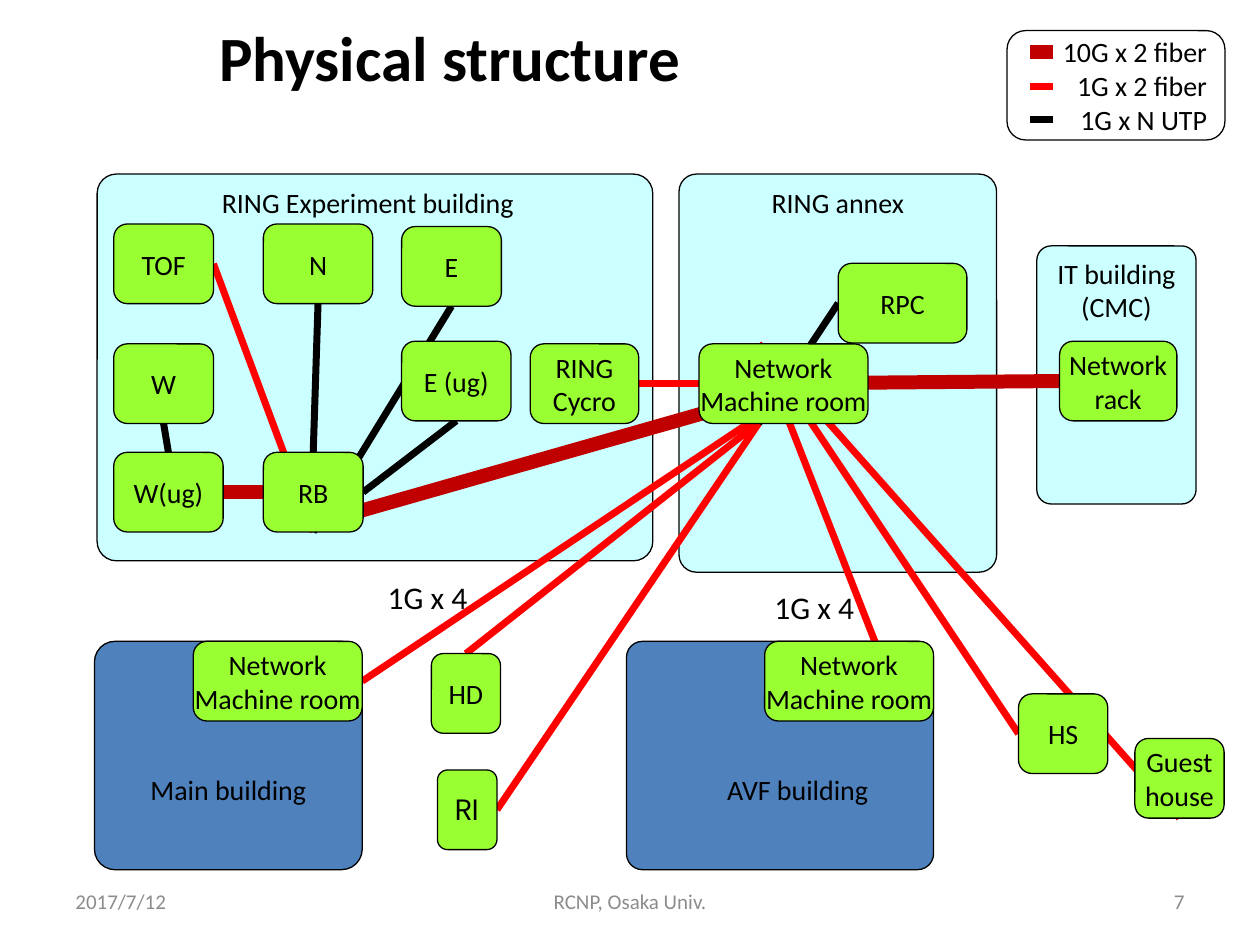
import pptx
import pptx.dml.color
import pptx.enum.shapes
import pptx.enum.text
import pptx.oxml
import pptx.util

Pt = pptx.util.Pt
ALIGN = pptx.enum.text.PP_ALIGN
ANCHOR = pptx.enum.text.MSO_ANCHOR
SHAPE = pptx.enum.shapes.MSO_SHAPE
STRAIGHT = pptx.enum.shapes.MSO_CONNECTOR.STRAIGHT

TOP, LEFT, BOTTOM, RIGHT = range(4)
ROOM_HEIGHT = 45.5
PALE, BLUE, GREEN = "CCFFFF", "4F81BD", "99FF33"
FIBER_10G, FIBER_1G, UTP = ("C00000", 8), ("FF0000", 4), ("000000", 4)

# name: (box, fill, corner, text, anchor, extra insets left/top/right)
BUILDINGS = {
    "annex": ((388, 99.5, 181.5, 227.5), PALE, 0.055, "RING annex", ANCHOR.TOP, (0, 0, 0)),
    "experiment": ((55.5, 99.5, 317.5, 221), PALE, 0.05, "RING Experiment building",
                   ANCHOR.TOP, (0, 0, 8)),
    "it": ((592.5, 140.5, 91, 147.5), PALE, 0.09, "IT building\n(CMC)", ANCHOR.TOP, (0, 0, 0)),
    "main": ((54, 366.5, 153, 130.5), BLUE, 0.09, "Main building", ANCHOR.MIDDLE, (0, 39, 0)),
    "avf": ((358, 366.5, 175.5, 130.5), BLUE, 0.07, "AVF building", ANCHOR.MIDDLE, (20, 39, 0)),
}

ROOMS = {
    "experiment": [
        ("TOF", "TOF", 9.5, 28.5, 57),
        ("W", "W", 9.5, 97, 57),
        ("W ug", "W(ug)", 9.5, 159, 62.5),
        ("N", "N", 95, 28.5, 62.5),
        ("RB", "RB", 95, 159, 57),
        ("E", "E", 174, 30, 57),
        ("E ug", "E (ug)", 174, 95.5, 62.5),
        ("Cycro", "RING\nCycro", 247.5, 97, 62),
    ],
    "annex": [
        ("RPC", "RPC", 91, 51, 73.5),
        ("hub", "Network\nMachine room", 11.5, 97, 96.5),
    ],
    "it": [("rack", "Network\nrack", 13, 54.5, 67)],
    "main": [("main room", "Network\nMachine room", 56.5, 0, 96.5)],
    "avf": [("avf room", "Network\nMachine room", 79, 0, 96.5)],
    "outside": [
        ("HD", "HD", 246.5, 373.5, 39.5),
        ("RI", "RI", 250, 440, 34),
        ("HS", "HS", 582, 396.5, 51),
        ("guest", "Guest\nhouse", 648.5, 422, 51),
    ],
}

HUB_TOP, HUB_BOTTOM, HUB_CORE = (433.5, 196.5), (433.5, 242), (462, 219)
CABLES = [
    (FIBER_10G, (190, 296.5), HUB_CORE),
    (FIBER_1G, ("HD", TOP), HUB_CORE),
    (FIBER_1G, HUB_TOP, ("guest", BOTTOM)),
    (FIBER_1G, ("HS", LEFT), HUB_TOP),
    (FIBER_10G, ("W ug", RIGHT), ("RB", LEFT)),
    (FIBER_1G, ("Cycro", RIGHT), ("hub", LEFT)),
    (UTP, ("RPC", LEFT), HUB_BOTTOM),
    (FIBER_1G, HUB_TOP, (500.5, 368)),
    (UTP, ("W", BOTTOM), ("W ug", TOP)),
    (UTP, ("E ug", BOTTOM), ("RB", RIGHT)),
    (UTP, ("E", BOTTOM), ("RB", BOTTOM)),
    (UTP, ("N", BOTTOM), ("RB", TOP)),
    (FIBER_1G, ("TOF", RIGHT), ("RB", BOTTOM)),
    (FIBER_1G, ("main room", RIGHT), HUB_CORE),
    (FIBER_1G, ("RI", RIGHT), HUB_BOTTOM),
    (FIBER_10G, (460, 219), ("rack", LEFT)),
]


def color(hex_text):
    """Return the colour for a hex string."""
    return pptx.dml.color.RGBColor.from_string(hex_text)


def write(shape, text, size=16, align=ALIGN.CENTER, anchor=ANCHOR.MIDDLE,
          ink="000000", bold=False, font="Calibri", wrap=True):
    """Put formatted text in a shape."""
    frame = shape.text_frame
    frame.text = text
    frame.word_wrap = wrap
    frame.vertical_anchor = anchor
    for para in frame.paragraphs:
        para.alignment = align
        for span in para.runs:
            span.font.size = Pt(size)
            span.font.name = font
            span.font.bold = bold
            span.font.color.rgb = color(ink)


def add_panel(page, box, fill, corner):
    """Add an outlined rounded rectangle."""
    panel = page.shapes.add_shape(SHAPE.ROUNDED_RECTANGLE, *map(Pt, box))
    panel.adjustments[0] = corner
    panel.shadow.inherit = False
    if fill:
        panel.fill.solid()
        panel.fill.fore_color.rgb = color(fill)
    else:
        panel.fill.background()
    panel.line.color.rgb = color("000000")
    panel.line.width = Pt(0.75)
    return panel


def add_label(page, box, text, **style):
    """Add a plain text box."""
    write(page.shapes.add_textbox(*map(Pt, box)), text, **style)


def add_cable(page, kind, start=(0, 0), end=(0, 0)):
    """Add a straight cable of the given kind."""
    ink, width = kind
    cable = page.shapes.add_connector(STRAIGHT, *map(Pt, start + end))
    cable.line.color.rgb = color(ink)
    cable.line.width = Pt(width)
    cable._element.spPr.append(pptx.oxml.parse_xml(
        '<a:effectLst xmlns:a="http://schemas.openxmlformats.org/drawingml/2006/main"/>'))
    return cable


def join_cable(cable, start, end, rooms):
    """Lead both ends of a cable to a room side or a free point."""
    if start[0] in rooms:
        cable.begin_connect(rooms[start[0]], start[1])
    else:
        cable.begin_x, cable.begin_y = map(Pt, start)
    if end[0] in rooms:
        cable.end_connect(rooms[end[0]], end[1])
    else:
        cable.end_x, cable.end_y = map(Pt, end)


def add_building(page, box, fill, corner, text, anchor, insets):
    """Add a building with its name."""
    building = add_panel(page, box, fill, corner)
    write(building, text, anchor=anchor)
    frame = building.text_frame
    frame.margin_left = Pt(7.2 + insets[0])
    frame.margin_top = Pt(3.6 + insets[1])
    frame.margin_right = Pt(7.2 + insets[2])


def add_rooms(page, box, entries):
    """Add the rooms of one area and return them by name."""
    rooms = {}
    for name, text, left, top, width in entries:
        room_box = (box[0] + left, box[1] + top, width, ROOM_HEIGHT)
        rooms[name] = add_panel(page, room_box, GREEN, 0.17)
        font = "Noto Sans CJK JP" if name == "RI" else "Calibri"
        write(rooms[name], text, font=font, wrap=False)
    return rooms


def add_legend(page, box):
    """Add the key to the cable kinds."""
    write(add_panel(page, box, None, 0.17),
          "10G x 2 fiber\n1G x 2 fiber\n1G x N UTP", align=ALIGN.RIGHT)
    for row, kind in enumerate((FIBER_10G, FIBER_1G, UTP)):
        left, level = box[0] + 13, box[1] + 12.5 + 19.25 * row
        add_cable(page, kind, (left, level), (left + 13.5, level))


def add_footer(page, box):
    """Add date, place and page number along the bottom."""
    left, top, width, height = box
    parts = [("2017/7/12", 0, 168, ALIGN.LEFT),
             ("RCNP, Osaka Univ.", 210, 228, ALIGN.CENTER),
             ("7", width - 168, 168, ALIGN.RIGHT)]
    for text, offset, span_width, align in parts:
        add_label(page, (left + offset, top, span_width, height), text,
                  size=12, align=align, ink="8C8C8C")


def add_network(page, outside):
    """Add buildings, cables and rooms, with the cables behind the rooms."""
    for building in BUILDINGS.values():
        add_building(page, *building)
    cables = [add_cable(page, kind) for kind, _, _ in CABLES]
    rooms = {}
    for area, entries in ROOMS.items():
        box = BUILDINGS[area][0] if area in BUILDINGS else outside
        rooms.update(add_rooms(page, box, entries))
    for cable, (_, start, end) in zip(cables, CABLES):
        join_cable(cable, start, end, rooms)
    for left, top in ((214.5, 327), (435.5, 332.5)):
        add_label(page, (outside[0] + left, outside[1] + top, 66, 29), "1G x 4",
                  size=18, align=ALIGN.LEFT, anchor=ANCHOR.TOP)


def main():
    """Build and save the slide."""
    deck = pptx.Presentation()
    deck.slide_width, deck.slide_height = Pt(720), Pt(540)
    page = deck.slides.add_slide(deck.slide_layouts[6])
    add_label(page, (54, 4.5, 406, 55.5), "Physical structure", size=36, bold=True)
    add_network(page, (0, 0, 720, 540))
    add_legend(page, (575.5, 17.5, 124.5, 62.5))
    add_footer(page, (36, 500.5, 648, 28.5))
    deck.save("out.pptx")


if __name__ == "__main__":
    main()
